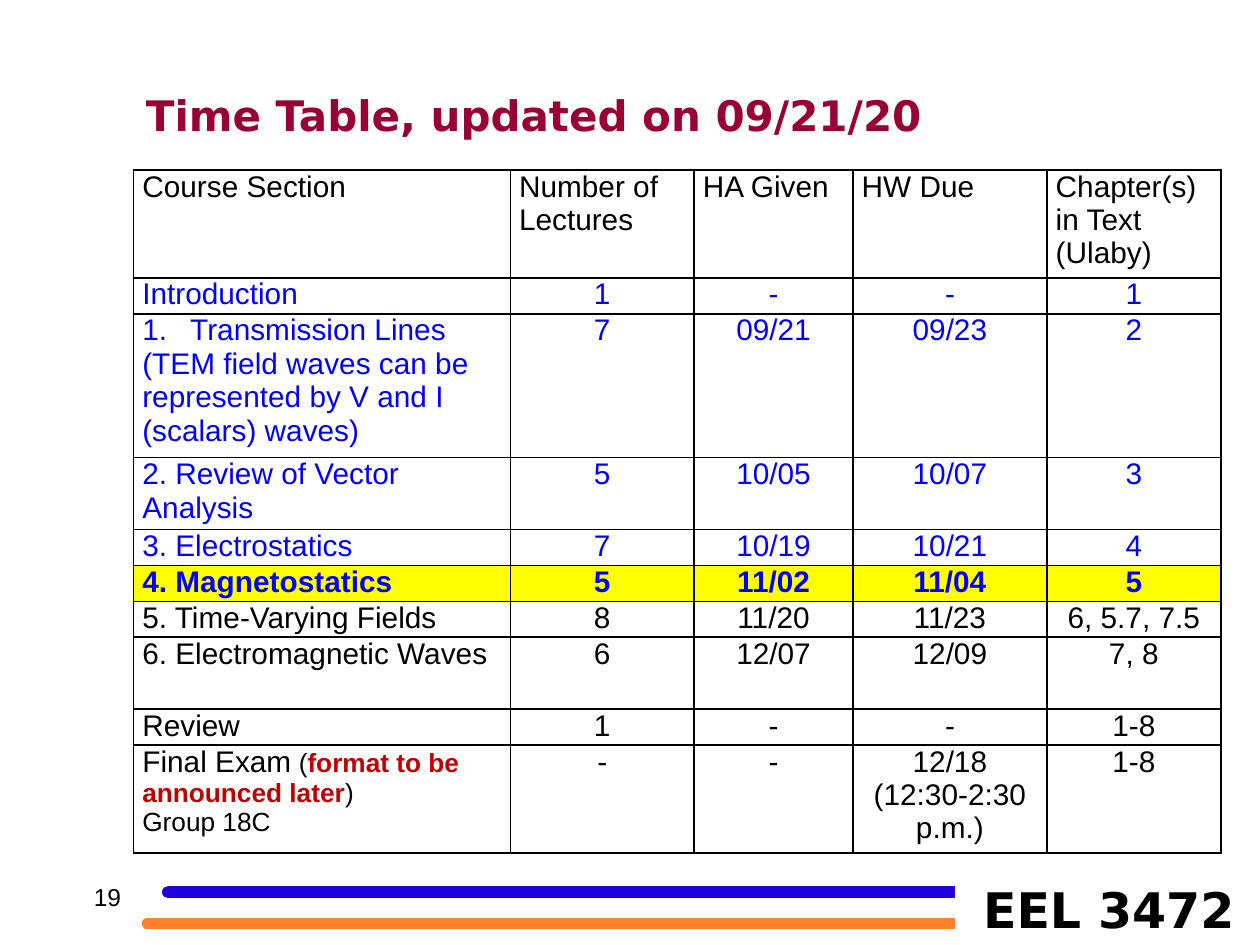
from itertools import accumulate

from lxml.etree import SubElement
from pptx import Presentation
from pptx.dml.color import RGBColor
from pptx.enum.shapes import MSO_CONNECTOR as CONNECTOR, MSO_SHAPE as SHAPE
from pptx.enum.text import PP_ALIGN as ALIGN
from pptx.oxml import parse_xml
from pptx.oxml.ns import nsdecls, qn
from pptx.util import Inches, Pt

THEME = {
    "body_font": "Arial", "display_font": "DejaVu Sans",
    "title": 24, "course": 28, "number": 14, "cell": 17, "note": 15,
    "border": 1, "stripe": 6.75,
    "ink": "000000", "done": "0000FF", "heading": "990033", "alert": "C00000",
    "highlight": "FFFF00", "upper_stripe": "2101DF", "lower_stripe": "FF812B",
}

TITLE = "Time Table, updated on 09/21/20"
COURSE = "EEL 3472"
SLIDE_NUMBER = "19"

# A cell is a list of paragraphs or one text; a paragraph is a text or a list of runs.
TRANSMISSION = ["Transmission Lines",
                "(TEM field waves can be represented by V and I (scalars) waves)"]
NOTE = {"size": THEME["note"]}
FINAL_EXAM = [
    [("Final Exam", {}), (" (", NOTE),
     ("format to be announced later", {**NOTE, "color": THEME["alert"], "bold": True}),
     (")", NOTE)],
    [("Group 18C", NOTE)],
]
# (height in lines, state, cells)
SCHEDULE = [
    (3, "header", ["Course Section", "Number of Lectures", "HA Given", "HW Due",
                   "Chapter(s) in Text (Ulaby)"]),
    (1, "done", ["Introduction", "1", "-", "-", "1"]),
    (4, "done", [TRANSMISSION, "7", "09/21", "09/23", "2"]),
    (2, "done", ["2. Review of Vector Analysis", "5", "10/05", "10/07", "3"]),
    (1, "done", ["3. Electrostatics", "7", "10/19", "10/21", "4"]),
    (1, "current", ["4. Magnetostatics", "5", "11/02", "11/04", "5"]),
    (1, "ahead", ["5. Time-Varying Fields", "8", "11/20", "11/23", "6, 5.7, 7.5"]),
    (2, "ahead", ["6. Electromagnetic Waves", "6", "12/07", "12/09", "7, 8"]),
    (1, "ahead", ["Review", "1", "-", "-", "1-8"]),
    (3, "ahead", [FINAL_EXAM, "-", "-", ["12/18", "(12:30-2:30 p.m.)"], "1-8"]),
]
STATES = {
    "header": {},
    "done": {"color": THEME["done"]},
    "current": {"color": THEME["done"], "bold": True},
    "ahead": {},
}

WIDTH, HEIGHT = 10, 7.5
LEFT = 1.06
TABLE_TOP, TABLE_HEIGHT = 1.35, 5.42
COLUMNS = [2.99, 1.46, 1.26, 1.54, 1.38]
STRIPE_END, CAP = 7.58, 0.08
STRIPES = [(1.33, 7.08, THEME["upper_stripe"]), (1.17, 7.33, THEME["lower_stripe"])]


def rgb(code):
    return RGBColor.from_string(code)


def write(frame, content, align=ALIGN.LEFT, **style):
    """Fill a text frame; run formats override the style of the whole text."""
    base = {"font": THEME["body_font"], "size": THEME["cell"],
            "color": THEME["ink"], "bold": False, **style}
    frame.word_wrap = True
    for index, runs in enumerate([content] if isinstance(content, str) else content):
        paragraph = frame.add_paragraph() if index else frame.paragraphs[0]
        paragraph.alignment = align
        for text, changes in [(runs, {})] if isinstance(runs, str) else runs:
            look = {**base, **changes}
            run = paragraph.add_run()
            run.text = text
            run.font.name = look["font"]
            run.font.size = Pt(look["size"])
            run.font.bold = look["bold"]
            run.font.color.rgb = rgb(look["color"])


def add_label(slide, text, box, **style):
    label = slide.shapes.add_textbox(*map(Inches, box))
    write(label.text_frame, text, **style)


def add_stripe(slide, start, y, color):
    """Draw a thick line with a round cap at its left end."""
    line = slide.shapes.add_connector(
        CONNECTOR.STRAIGHT, *map(Inches, (start, y, STRIPE_END, y)))
    line.line.color.rgb = rgb(color)
    line.line.width = Pt(THEME["stripe"])
    SubElement(line._element.spPr, qn("a:effectLst"))
    cap = slide.shapes.add_shape(
        SHAPE.OVAL, *map(Inches, (start - CAP / 2, y - CAP / 2, CAP, CAP)))
    cap.shadow.inherit = False
    cap.fill.solid()
    cap.fill.fore_color.rgb = rgb(color)
    cap.line.color.rgb = rgb(color)
    cap.line.width = Pt(0.75)


def add_borders(cell):
    properties = cell._tc.get_or_add_tcPr()
    for index, side in enumerate("LRTB"):
        properties.insert(index, parse_xml(
            f'<a:ln{side} {nsdecls("a")} w="{Pt(THEME["border"])}"><a:solidFill>'
            f'<a:srgbClr val="{THEME["ink"]}"/></a:solidFill></a:ln{side}>'))


def number_paragraph(paragraph, indent=0.38):
    properties = paragraph._p.get_or_add_pPr()
    properties.set("marL", str(Inches(indent)))
    properties.set("indent", str(-Inches(indent)))
    SubElement(properties, qn("a:buFont"), typeface=THEME["body_font"])
    SubElement(properties, qn("a:buAutoNum"), type="arabicPeriod")


def add_schedule(slide):
    line_height = TABLE_HEIGHT / sum(lines for lines, _, _ in SCHEDULE)
    table = slide.shapes.add_table(
        len(SCHEDULE), len(COLUMNS),
        *map(Inches, (LEFT, TABLE_TOP, sum(COLUMNS), TABLE_HEIGHT))).table
    table.first_row = table.horz_banding = False
    edges = [0, *accumulate(COLUMNS)]
    for column, left, right in zip(table.columns, edges, edges[1:]):
        column.width = Inches(right) - Inches(left)
    for row, (lines, state, texts) in zip(table.rows, SCHEDULE):
        row.height = Inches(lines * line_height)
        for position, (cell, text) in enumerate(zip(row.cells, texts)):
            cell.margin_left = cell.margin_right = Inches(0.07)
            cell.margin_top = cell.margin_bottom = 0
            if state == "current":
                cell.fill.solid()
                cell.fill.fore_color.rgb = rgb(THEME["highlight"])
            else:
                cell.fill.background()
            add_borders(cell)
            if text is TRANSMISSION:
                number_paragraph(cell.text_frame.paragraphs[0])
            centred = position and state != "header"
            write(cell.text_frame, text,
                  align=ALIGN.CENTER if centred else ALIGN.LEFT, **STATES[state])


def main():
    deck = Presentation()
    deck.slide_width, deck.slide_height = Inches(WIDTH), Inches(HEIGHT)
    slide = deck.slides.add_slide(deck.slide_layouts[6])
    for stripe in STRIPES:
        add_stripe(slide, *stripe)
    add_label(slide, COURSE, (7.6, 6.93, 2.4, 0.57), align=ALIGN.CENTER,
              font=THEME["display_font"], size=THEME["course"], bold=True)
    add_label(slide, SLIDE_NUMBER, (0.62, 6.95, 0.44, 0.42), align=ALIGN.RIGHT,
              size=THEME["number"])
    add_schedule(slide)
    add_label(slide, TITLE, (LEFT, 0.66, 6.97, 0.5), font=THEME["display_font"],
              size=THEME["title"], color=THEME["heading"], bold=True)
    deck.save("out.pptx")


if __name__ == "__main__":
    main()
